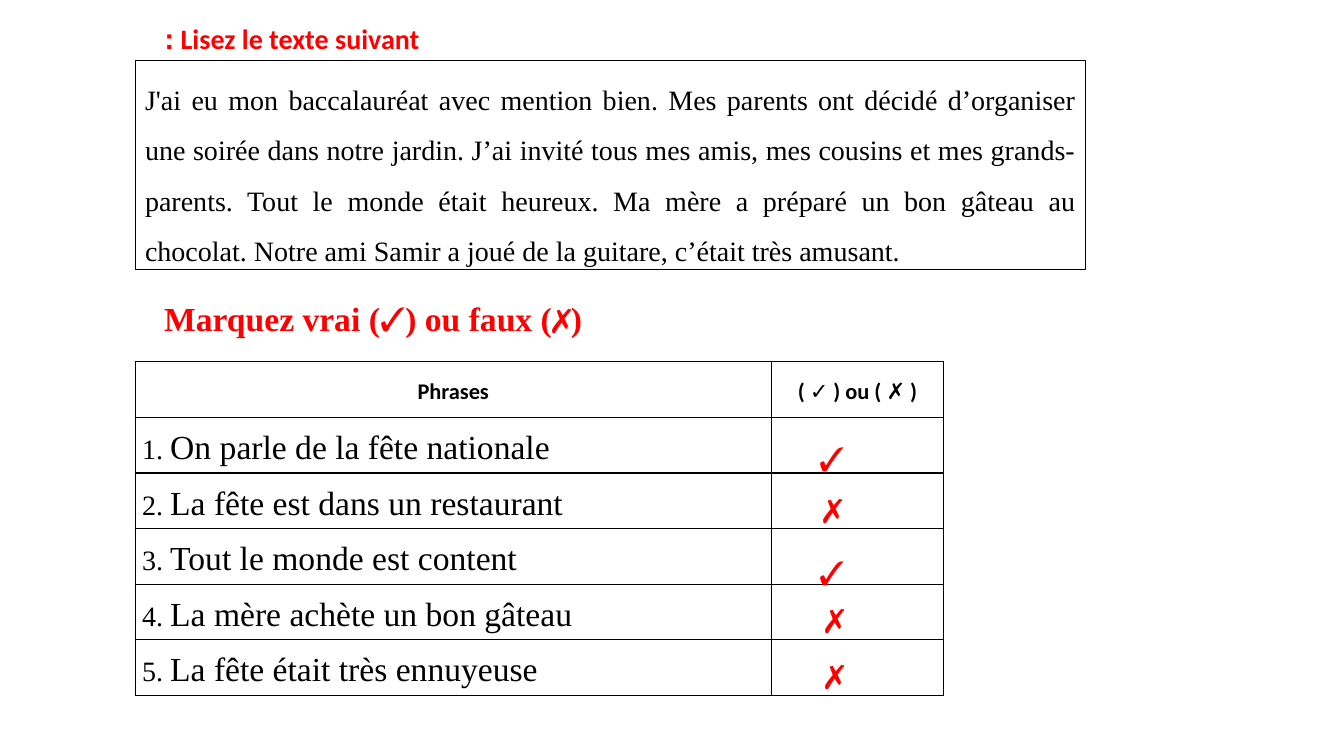
from lxml import etree
from pptx import Presentation
from pptx.dml.color import RGBColor
from pptx.enum.shapes import MSO_SHAPE
from pptx.enum.text import MSO_ANCHOR, MSO_AUTO_SIZE, PP_ALIGN
from pptx.oxml.ns import qn
from pptx.util import Inches, Pt

RED = RGBColor(0xFF, 0x00, 0x00)
BLACK = RGBColor(0x00, 0x00, 0x00)
WHITE = RGBColor(0xFF, 0xFF, 0xFF)
SANS, SERIF = "Calibri", "Times New Roman"
LEFT, CENTER = PP_ALIGN.LEFT, PP_ALIGN.CENTER
RIGHT, JUSTIFY = PP_ALIGN.RIGHT, PP_ALIGN.JUSTIFY
TOP, MIDDLE = MSO_ANCHOR.TOP, MSO_ANCHOR.MIDDLE
RECTANGLE = MSO_SHAPE.RECTANGLE
GROW = MSO_AUTO_SIZE.SHAPE_TO_FIT_TEXT

TRUE_MARK, FALSE_MARK = "✓", "✗"
PASSAGE = (
    "J'ai eu mon baccalauréat avec mention bien. Mes parents ont décidé "
    "d’organiser une soirée dans notre jardin. J’ai invité tous mes amis, mes "
    "cousins et mes grands-parents. Tout le monde était heureux. Ma mère a "
    "préparé un bon gâteau au chocolat. Notre ami Samir a joué de la guitare, "
    "c’était très amusant."
)
# Sentence, answer, and the answer's left and top
STATEMENTS = [
    ("On parle de la fête nationale", TRUE_MARK, 7.93, 4.24),
    ("La fête est dans un restaurant", FALSE_MARK, 7.94, 4.73),
    ("Tout le monde est content", TRUE_MARK, 7.93, 5.37),
    ("La mère achète un bon gâteau", FALSE_MARK, 7.96, 5.82),
    ("La fête était très ennuyeuse", FALSE_MARK, 7.96, 6.38),
]


def write(paragraph, text, size=20, font=SANS, color=BLACK, bold=False,
          align=LEFT, spacing=1.15, right_to_left=False):
    paragraph.alignment = align
    paragraph.line_spacing = spacing
    if right_to_left:
        paragraph._p.get_or_add_pPr().set("rtl", "1")
    run = paragraph.add_run()
    run.text = text
    run.font.size = Pt(size)
    run.font.name = font
    run.font.bold = bold
    run.font.color.rgb = color


def add_label(slide, box, text, wrap=True, **text_format):
    shape = slide.shapes.add_textbox(*map(Inches, box))
    shape.text_frame.word_wrap = wrap
    shape.text_frame.auto_size = GROW
    write(shape.text_frame.paragraphs[0], text, **text_format)


def add_passage(slide, box):
    shape = slide.shapes.add_shape(RECTANGLE, *map(Inches, box))
    shape.shadow.inherit = False
    shape.fill.solid()
    shape.fill.fore_color.rgb = WHITE
    shape.line.color.rgb = BLACK
    shape.line.width = Pt(0.75)
    frame = shape.text_frame
    frame.word_wrap = True
    frame.vertical_anchor = TOP
    write(frame.paragraphs[0], PASSAGE, font=SERIF, align=JUSTIFY, spacing=1.5)


def format_cell(cell):
    cell.fill.background()
    cell.vertical_anchor = MIDDLE
    cell.margin_left = cell.margin_right = Inches(0.07)
    cell.margin_top = cell.margin_bottom = 0
    properties = cell._tc.get_or_add_tcPr()
    for position, side in enumerate(("lnL", "lnR", "lnT", "lnB")):
        line = etree.Element(qn(f"a:{side}"), w=str(Pt(1)))
        fill = etree.SubElement(line, qn("a:solidFill"))
        etree.SubElement(fill, qn("a:srgbClr"), val=str(BLACK))
        properties.insert(position, line)


def add_statement_table(slide, box):
    left, top, width, height = map(Inches, box)
    row_count = len(STATEMENTS) + 1
    table = slide.shapes.add_table(row_count, 2, left, top, width, height).table
    table.first_row = table.horz_banding = False
    table.columns[0].width = Inches(6.31)
    table.columns[1].width = width - Inches(6.31)
    for row in table.rows:
        row.height = height // row_count
    for cell in table.iter_cells():
        format_cell(cell)

    # Header row
    headings = ("Phrases", f"( {TRUE_MARK} ) ou ( {FALSE_MARK} )")
    for column, heading in enumerate(headings):
        write(table.cell(0, column).text_frame.paragraphs[0], heading,
              size=16, bold=True, align=CENTER)

    # Numbered sentences
    for number, (sentence, *_) in enumerate(STATEMENTS, start=1):
        paragraph = table.cell(number, 0).text_frame.paragraphs[0]
        write(paragraph, f"{number}. ", font=SERIF)
        write(paragraph, sentence, size=24, font=SERIF)


def add_answers(slide):
    for _, mark, left, top in STATEMENTS:
        add_label(slide, (left, top, 0.64, 0.53), mark, size=24, color=RED,
                  bold=True, align=CENTER, right_to_left=True)


def main():
    presentation = Presentation()
    presentation.slide_width = Inches(13.33)
    presentation.slide_height = Inches(7.5)
    slide = presentation.slides.add_slide(presentation.slide_layouts[6])

    # Reading
    add_label(slide, (1.53, 0, 2.73, 0.55), "Lisez le texte suivant\u00a0:",
              wrap=False, color=RED, bold=True, align=RIGHT, spacing=1.5,
              right_to_left=True)
    add_passage(slide, (1.34, 0.6, 9.43, 2.07))

    # True or false
    add_label(slide, (1.53, 2.71, 8.02, 0.64),
              f"Marquez vrai ({TRUE_MARK}) ou faux ({FALSE_MARK})",
              size=24, font=SERIF, color=RED, bold=True, spacing=1.5)
    add_statement_table(slide, (1.34, 3.59, 8.02, 3.31))
    add_answers(slide)
    presentation.save("out.pptx")


if __name__ == "__main__":
    main()
